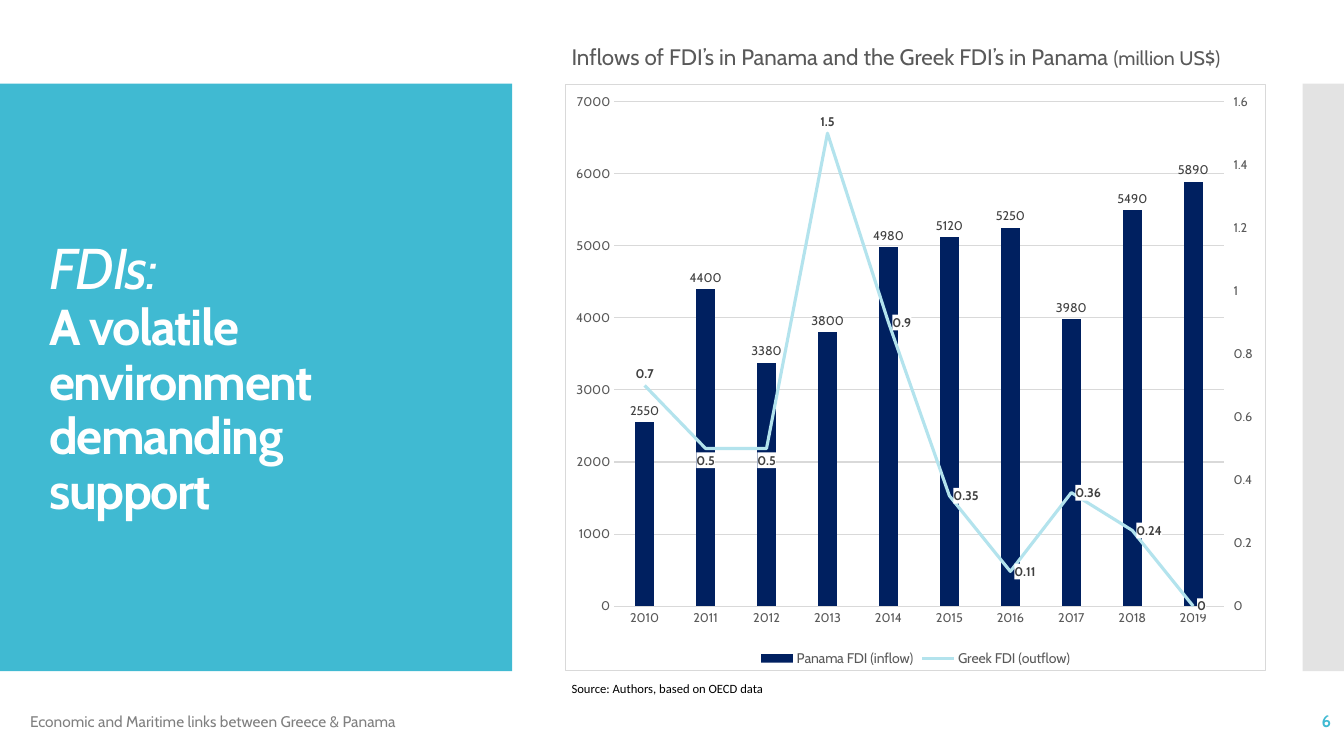
from lxml import etree
from pptx import Presentation
from pptx import util as u
from pptx.chart.data import CategoryChartData
from pptx.dml.color import RGBColor
from pptx.enum import chart as ch
from pptx.enum import shapes, text
from pptx.oxml import parse_xml
from pptx.oxml.ns import nsdecls, qn

TEAL = RGBColor(0x40, 0xBA, 0xD2)
SILVER = RGBColor(0xC8, 0xC8, 0xC8)
WHITE = RGBColor(0xFF, 0xFF, 0xFF)
BLACK = RGBColor(0, 0, 0)
NAVY = RGBColor(0x00, 0x20, 0x60)
PALE_BLUE = RGBColor(0xB3, 0xE3, 0xED)
GRID = RGBColor(0xD9, 0xD9, 0xD9)
LABEL = RGBColor(0x40, 0x40, 0x40)
GREY = RGBColor(0x59, 0x59, 0x59)
FOOTER = RGBColor(0x80, 0x80, 0x80)
FONT = "Cabin"

YEARS = [str(year) for year in range(2010, 2020)]
PANAMA = [2550, 4400, 3380, 3800, 4980, 5120, 5250, 3980, 5490, 5890]
GREECE = [0.7, 0.5, 0.5, 1.5, 0.9, 0.35, 0.11, 0.36, 0.24, 0]


def set_font(font, size, color, bold=False, name=FONT):
    font.name = name
    font.size = u.Pt(size)
    font.bold = bold
    font.color.rgb = color


def place(shape, left, top, width, height):
    shape.left, shape.top = u.Inches(left), u.Inches(top)
    shape.width, shape.height = u.Inches(width), u.Inches(height)


def add_panel(slide, left, width, color, opacity=100):
    panel = slide.shapes.add_shape(
        shapes.MSO_SHAPE.RECTANGLE,
        u.Inches(left), u.Inches(0.83), u.Inches(width), u.Inches(5.83))
    panel.shadow.inherit = False
    panel.line.fill.background()
    panel.fill.solid()
    panel.fill.fore_color.rgb = color
    if opacity < 100:
        color_element = panel._element.spPr.find(qn("a:solidFill"))[0]
        etree.SubElement(color_element, qn("a:alpha"), val=str(opacity * 1000))


def add_text(slide, box, words, size, color, bold=False, name=FONT,
             anchor=text.MSO_ANCHOR.MIDDLE, align=text.PP_ALIGN.LEFT, wrap=True):
    frame = slide.shapes.add_textbox(*map(u.Inches, box)).text_frame
    frame.word_wrap = wrap
    frame.vertical_anchor = anchor
    paragraph = frame.paragraphs[0]
    paragraph.text = words
    paragraph.alignment = align
    set_font(paragraph.font, size, color, bold, name)
    return paragraph


def fill_title(slide):
    title = slide.shapes.title
    place(title, 0.39, 1.65, 3.56, 3.56)
    frame = title.text_frame
    frame.word_wrap = True
    frame.auto_size = text.MSO_AUTO_SIZE.NONE
    frame.vertical_anchor = text.MSO_ANCHOR.BOTTOM
    paragraph = frame.paragraphs[0]
    paragraph.alignment = text.PP_ALIGN.LEFT
    paragraph.line_spacing = 0.9
    lead = paragraph.add_run()
    lead.text = "FDIs:"
    paragraph.add_line_break()
    message = paragraph.add_run()
    message.text = "A volatile environment demanding support"
    set_font(lead.font, 41, WHITE)
    set_font(message.font, 36, WHITE, bold=True)
    lead.font.italic = True
    for run in (lead, message):
        run._r.get_or_add_rPr().set("spc", "-100")


def box_format(fill, border=None):
    line = "<a:noFill/>"
    if border:
        line = f'<a:solidFill><a:srgbClr val="{border}"/></a:solidFill>'
    return parse_xml(
        f'<c:spPr {nsdecls("c", "a")}><a:solidFill><a:srgbClr val="{fill}"/>'
        f'</a:solidFill><a:ln w="9525">{line}</a:ln></c:spPr>')


def move_to_right_axis(chart):
    bars = chart._chartSpace.find(".//" + qn("c:barChart"))
    series = bars.findall(qn("c:ser"))[1]
    for bar_only in series.findall(qn("c:invertIfNegative")):
        series.remove(bar_only)
    lines = parse_xml(
        f'<c:lineChart {nsdecls("c")}><c:grouping val="standard"/>'
        '<c:varyColors val="0"/><c:marker val="1"/>'
        '<c:axId val="5001"/><c:axId val="5002"/></c:lineChart>')
    lines.insert(2, series)
    bars.addnext(lines)
    axes = parse_xml(
        f'<c:plotArea {nsdecls("c", "a")}>'
        '<c:valAx><c:axId val="5002"/><c:scaling><c:orientation val="minMax"/>'
        '<c:max val="1.6"/><c:min val="0"/></c:scaling><c:delete val="0"/>'
        '<c:axPos val="r"/><c:numFmt formatCode="General" sourceLinked="0"/>'
        '<c:majorTickMark val="out"/><c:minorTickMark val="none"/>'
        '<c:tickLblPos val="nextTo"/><c:spPr><a:ln><a:noFill/></a:ln></c:spPr>'
        f'<c:txPr><a:bodyPr/><a:p><a:pPr><a:defRPr sz="900" b="0"><a:solidFill>'
        f'<a:srgbClr val="{GREY}"/></a:solidFill><a:latin typeface="{FONT}"/>'
        '</a:defRPr></a:pPr><a:endParaRPr/></a:p></c:txPr>'
        '<c:crossAx val="5001"/><c:crosses val="max"/><c:majorUnit val="0.2"/></c:valAx>'
        '<c:catAx><c:axId val="5001"/><c:scaling><c:orientation val="minMax"/>'
        '</c:scaling><c:delete val="1"/><c:axPos val="b"/>'
        '<c:crossAx val="5002"/></c:catAx></c:plotArea>')
    last_axis = chart._chartSpace.findall(".//" + qn("c:valAx"))[-1]
    for axis in reversed(list(axes)):
        last_axis.addnext(axis)


def set_plot_layout(chart, **fractions):
    area = chart._chartSpace.find(".//" + qn("c:plotArea"))
    for old in area.findall(qn("c:layout")):
        area.remove(old)
    sizes = "".join(f'<c:{key} val="{value}"/>' for key, value in fractions.items())
    area.insert(0, parse_xml(
        f'<c:layout {nsdecls("c")}><c:manualLayout><c:layoutTarget val="inner"/>'
        f'<c:xMode val="edge"/><c:yMode val="edge"/>{sizes}'
        '</c:manualLayout></c:layout>'))


def style_axes(chart):
    for axis in (chart.category_axis, chart.value_axis):
        axis.major_tick_mark = ch.XL_TICK_MARK.NONE
        set_font(axis.tick_labels.font, 9, GREY)
    years, values = chart.category_axis, chart.value_axis
    values.minimum_scale, values.maximum_scale, values.major_unit = 0, 7000, 1000
    values.format.line.fill.background()
    for line in (years.format.line, values.major_gridlines.format.line):
        line.color.rgb = GRID
        line.width = u.Pt(0.75)


def label_series(series, position, bold=False):
    labels = series.data_labels
    labels.show_value = True
    labels.position = position
    set_font(labels.font, 9, LABEL, bold)
    return labels


def style_greek_line(series):
    series.smooth = False
    series.marker.style = ch.XL_MARKER_STYLE.NONE
    series.format.line.color.rgb = PALE_BLUE
    series.format.line.width = u.Pt(2.25)
    positions = ch.XL_LABEL_POSITION
    labels = label_series(series, positions.RIGHT, bold=True)
    special = {0: positions.ABOVE, 1: positions.BELOW,
               2: positions.BELOW, 3: positions.ABOVE}
    for index, position in special.items():
        label = series.points[index].data_label
        set_font(label.font, 9, LABEL, bold=True)
        label.position = position
    for text_format in list(labels._element.iter(qn("c:txPr"))):
        for old in text_format.getparent().findall(qn("c:spPr")):
            text_format.getparent().remove(old)
        text_format.addprevious(box_format(WHITE))


def add_fdi_chart(slide):
    data = CategoryChartData()
    data.categories = YEARS
    data.add_series("Panama FDI (inflow)", PANAMA)
    data.add_series("Greek FDI (outflow)", GREECE)
    chart = slide.shapes.add_chart(
        ch.XL_CHART_TYPE.COLUMN_CLUSTERED,
        *map(u.Inches, (5.6, 0.83, 6.96, 5.83)), data).chart
    set_font(chart.font, 10, BLACK)
    chart.has_title = False
    chart.has_legend = True
    chart.legend.position = ch.XL_LEGEND_POSITION.BOTTOM
    chart.legend.include_in_layout = False
    set_font(chart.legend.font, 10, GREY)
    style_axes(chart)
    move_to_right_axis(chart)
    set_plot_layout(chart, x=0.07, y=0.03, w=0.87, h=0.86)
    columns, lines = chart.plots
    columns.gap_width = 219
    columns.vary_by_categories = False
    panama = columns.series[0]
    panama.format.fill.solid()
    panama.format.fill.fore_color.rgb = NAVY
    label_series(panama, ch.XL_LABEL_POSITION.OUTSIDE_END)
    style_greek_line(lines.series[0])
    chart._chartSpace.find(qn("c:txPr")).addprevious(box_format(WHITE, GRID))


def main():
    presentation = Presentation()
    presentation.slide_width = u.Inches(13.33)
    presentation.slide_height = u.Inches(7.5)
    slide = presentation.slides.add_slide(presentation.slide_layouts[5])
    add_panel(slide, 0, 5.08, TEAL)
    add_panel(slide, 12.92, 0.41, SILVER, opacity=50)
    fill_title(slide)
    title = slide.shapes.title._element
    title.getparent().append(title)
    add_fdi_chart(slide)
    add_text(slide, (11.63, 6.95, 1.67, 0.4), "6", 12, TEAL, bold=True,
             align=text.PP_ALIGN.RIGHT)
    add_text(slide, (0.2, 6.96, 6.46, 0.4),
             "Economic and Maritime links between Greece & Panama", 11, FOOTER)
    add_text(slide, (5.57, 6.71, 2.15, 0.25), "Source: Authors, based on OECD data",
             9, BLACK, name="Calibri", anchor=text.MSO_ANCHOR.TOP, wrap=False)
    heading = add_text(slide, (5.57, 0.38, 7.49, 0.37),
                       "Inflows of FDI’s in Panama and the Greek FDI’s in Panama ",
                       16, GREY, anchor=text.MSO_ANCHOR.TOP)
    unit = heading.add_run()
    unit.text = "(million US$)"
    unit.font.size = u.Pt(14)
    presentation.save("out.pptx")


if __name__ == "__main__":
    main()
